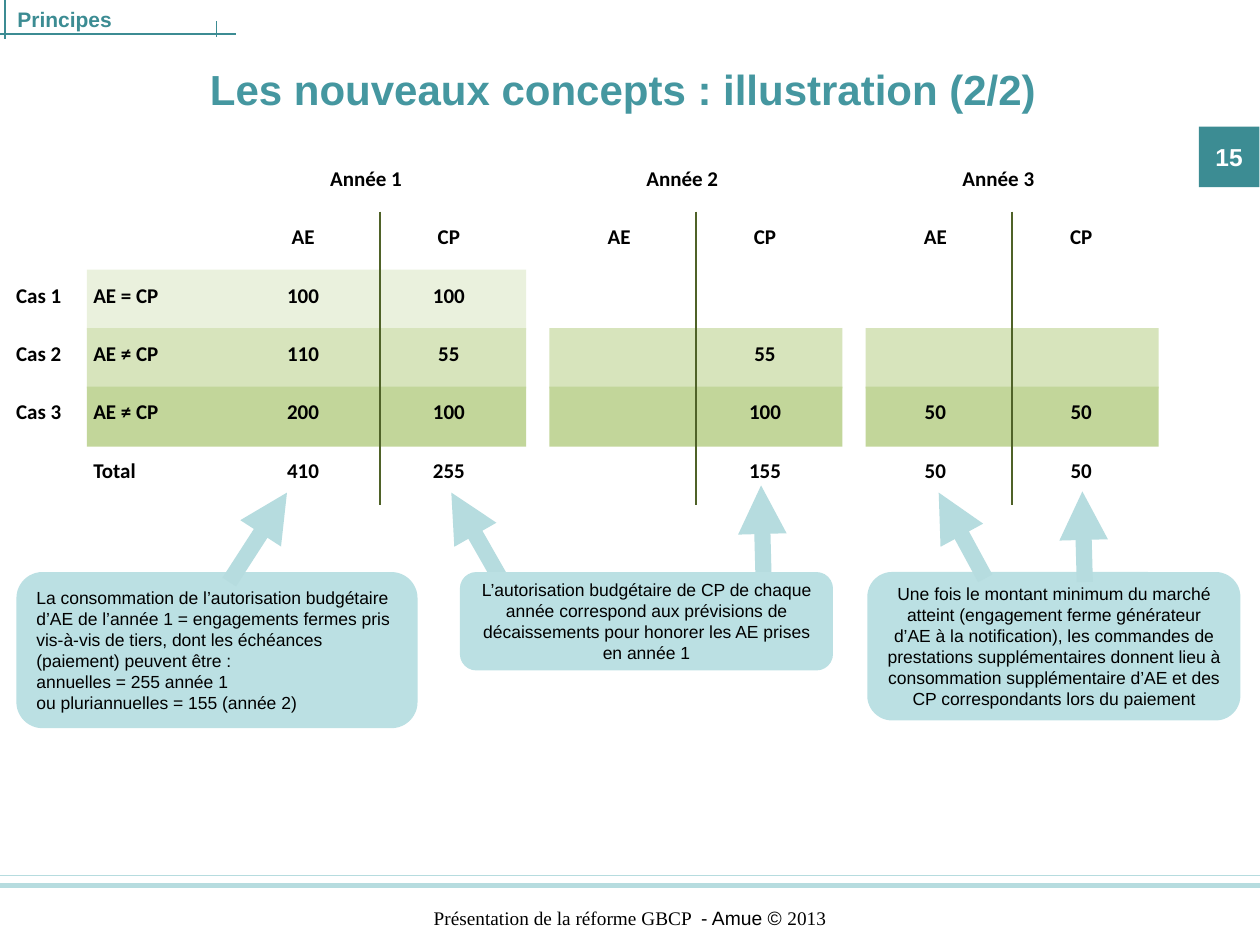
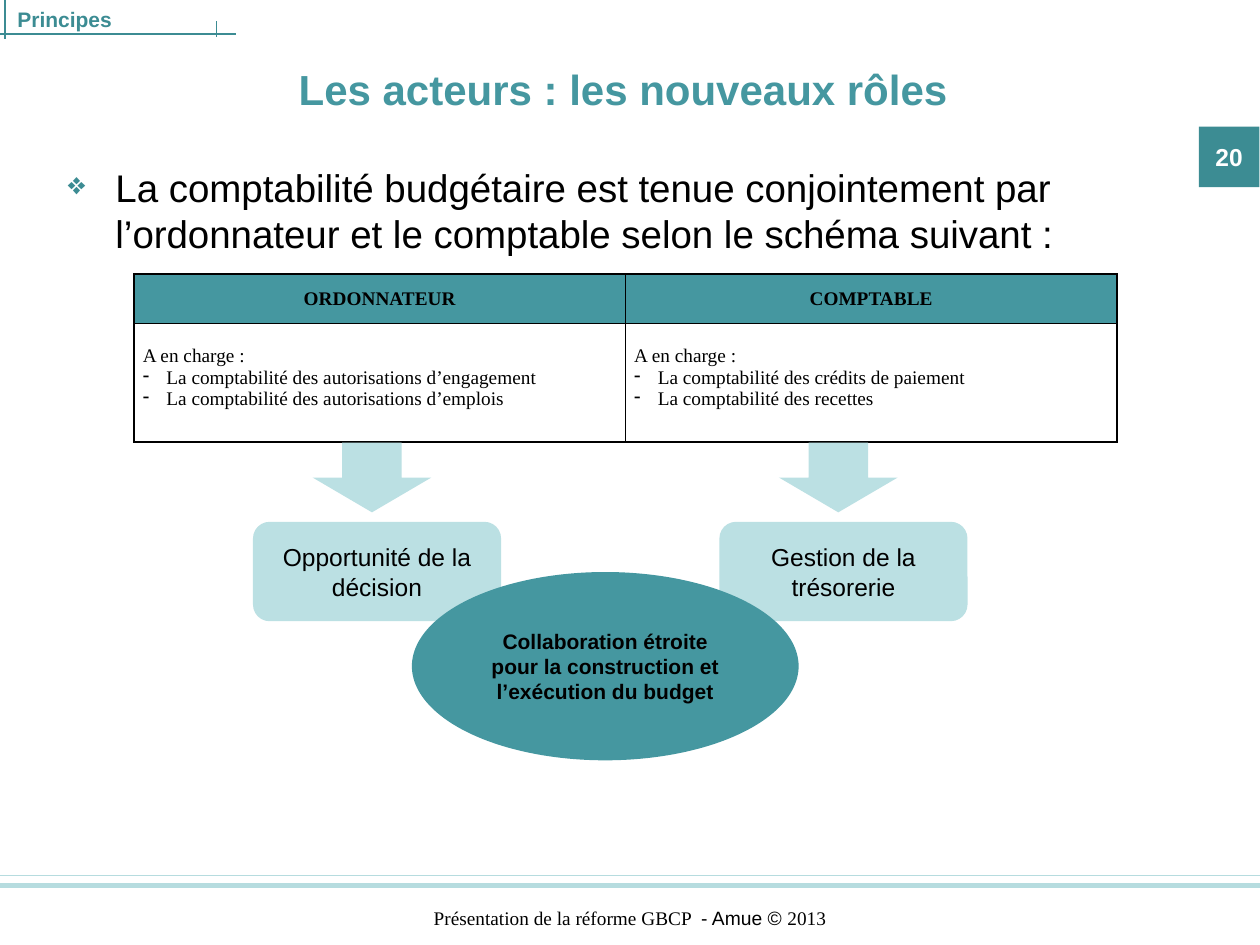
"""Build two slides on budget concepts and the roles of the actors."""
from dataclasses import dataclass

from lxml.etree import SubElement
from pptx import Presentation
from pptx.dml.color import RGBColor
from pptx.enum.shapes import MSO_CONNECTOR, MSO_SHAPE
from pptx.enum.text import MSO_ANCHOR, PP_ALIGN
from pptx.oxml import parse_xml
from pptx.oxml.ns import nsdecls, qn
from pptx.util import Pt


@dataclass(frozen=True)
class Style:
    size: float
    color: str = "000000"
    bold: bool = False
    font: str = "Arial"


@dataclass(frozen=True)
class Theme:
    dark: str = "3C8C93"
    accent: str = "4597A0"
    pale: str = "BBE0E3"
    rule: str = "B6DCDF"
    divider: str = "4F6228"
    black: str = "000000"
    bands: tuple = ("EAF1DD", "D7E4BC", "C2D69A")
    title: Style = Style(24, "4597A0", True)
    section: Style = Style(12, "3C8C93", True)
    badge: Style = Style(14, "FFFFFF", True)
    footer: Style = Style(11, font="Times New Roman")
    body: Style = Style(22)
    figure: Style = Style(12, bold=True, font="Calibri")
    callout: Style = Style(10)
    outcome: Style = Style(14)
    core: Style = Style(12, bold=True)
    head: Style = Style(11, bold=True, font="Times New Roman")
    cell: Style = Style(11, font="Times New Roman")


THEME = Theme()
LEFT, CENTER = PP_ALIGN.LEFT, PP_ALIGN.CENTER

SECTION = "Principes"
FOOTER = [("Présentation de la réforme GBCP  ", "Times New Roman"),
          ("- Amue © ", "Arial"), ("2013", "Times New Roman")]
FOOTER_RULES = [(500.4, 0.75), (506.2, 3)]
SECTION_LINES = [(2.9, 0, 2.9, 22.3), (0, 19.4, 134.6, 19.4), (123.8, 20.9, 123.8, 12.2)]

YEARS = ["Année 1", "Année 2", "Année 3"]
HEADINGS = ["AE", "CP"] * 3
CASES = [
    ("Cas 1", "AE = CP", ["100", "100", "", "", "", ""]),
    ("Cas 2", "AE ≠ CP", ["110", "55", "", "55", "", ""]),
    ("Cas 3", "AE ≠ CP", ["200", "100", "", "100", "50", "50"]),
    ("", "Total", ["410", "255", "", "155", "50", "50"]),
]
BAND_SPANS = [(49.7, 251), (313.9, 167.5), (494.6, 167.5)]
BAND_COUNTS = [1, 3, 3]

CALLOUTS = [
    {"box": (9.4, 326.9, 229.2, 89.2), "align": LEFT, "arrows_behind": False,
     "lines": ["La consommation de l’autorisation budgétaire d’AE de l’année 1 = engagements "
               "fermes pris vis-à-vis de tiers, dont les échéances (paiement) peuvent être :",
               "annuelles = 255 année 1",
               "ou pluriannuelles = 155 (année 2)"],
     "arrows": [(131, 332.6, 164, 281.5)]},
    {"box": (262.8, 326.9, 213.2, 56.2), "align": CENTER, "arrows_behind": True,
     "lines": ["L’autorisation budgétaire de CP de chaque année correspond aux prévisions de "
               "décaissements pour honorer les AE prises en année 1"],
     "arrows": [(436.3, 329, 434.9, 277.4), (288.7, 335.5, 257.9, 281.5)]},
    {"box": (495.6, 326.9, 213.2, 84.8), "align": CENTER, "arrows_behind": False,
     "lines": ["Une fois le montant minimum du marché atteint (engagement ferme générateur "
               "d’AE à la notification), les commandes de prestations supplémentaires donnent "
               "lieu à consommation supplémentaire d’AE et des CP correspondants lors du paiement"],
     "arrows": [(619.9, 332.6, 618.5, 280.8), (563, 330.5, 536.4, 281.5)]},
]

STATEMENT = ("La comptabilité budgétaire est tenue conjointement par l’ordonnateur "
             "et le comptable selon le schéma suivant :")
CHARGE = "A en charge :"
ROLES = [
    ("ORDONNATEUR", ["La comptabilité des autorisations d’engagement",
                     "La comptabilité des autorisations d’emplois"],
     "Opportunité de la décision"),
    ("COMPTABLE", ["La comptabilité des crédits de paiement",
                   "La comptabilité des recettes"],
     "Gestion de la trésorerie"),
]
COLLABORATION = "Collaboration étroite pour la construction et l’exécution du budget"


def rgb(color):
    return RGBColor.from_string(color)


def points(values):
    return [Pt(value) for value in values]


def add_bullet(paragraph, character, indent, color=None, percent=None):
    properties = paragraph._p.get_or_add_pPr()
    properties.set("marL", str(Pt(indent)))
    properties.set("indent", str(-Pt(indent)))
    if color:
        SubElement(SubElement(properties, qn("a:buClr")), qn("a:srgbClr")).set("val", color)
    if percent:
        SubElement(properties, qn("a:buSzPct")).set("val", str(percent * 1000))
    SubElement(properties, qn("a:buChar")).set("char", character)


def add_run(paragraph, text, style, font=None):
    run = paragraph.add_run()
    run.text = text
    run.font.name = font or style.font
    run.font.size = Pt(style.size)
    run.font.bold = style.bold
    run.font.color.rgb = rgb(style.color)


def write(frame, lines, style, align=LEFT, anchor=MSO_ANCHOR.TOP, inset=None):
    frame.word_wrap = True
    frame.vertical_anchor = anchor
    if inset is not None:
        frame.margin_left = frame.margin_right = Pt(inset)
        frame.margin_top = frame.margin_bottom = Pt(inset)
    for index, line in enumerate(lines):
        paragraph = frame.add_paragraph() if index else frame.paragraphs[0]
        paragraph.alignment = align
        for text, font in [(line, None)] if isinstance(line, str) else line:
            add_run(paragraph, text, style, font)


def add_text(slide, box, lines, style, **layout):
    frame = slide.shapes.add_textbox(*points(box)).text_frame
    write(frame, lines, style, **layout)
    return frame


def add_block(slide, kind, box, fill, lines=(), style=None, align=CENTER, inset=None):
    shape = slide.shapes.add_shape(kind, *points(box))
    shape.shadow.inherit = False
    shape.fill.solid()
    shape.fill.fore_color.rgb = rgb(fill)
    shape.line.fill.background()
    if lines:
        write(shape.text_frame, lines, style, align, MSO_ANCHOR.MIDDLE, inset)


def add_line(slide, ends, color, width, arrow=False):
    connector = slide.shapes.add_connector(MSO_CONNECTOR.STRAIGHT, *points(ends))
    connector.line.color.rgb = rgb(color)
    connector.line.width = Pt(width)
    if arrow:
        SubElement(connector.line._get_or_add_ln(), qn("a:tailEnd")).set("type", "triangle")
    SubElement(connector._element.spPr, qn("a:effectLst"))


def add_base_slide(presentation, title, number):
    slide = presentation.slides.add_slide(presentation.slide_layouts[6])
    add_text(slide, (123.8, 514.1, 472.3, 20.9), [FOOTER], THEME.footer, align=CENTER)
    for top, width in FOOTER_RULES:
        add_line(slide, (0, top, 720, top), THEME.rule, width)
    add_text(slide, (2.9, 0, 368.6, 21.6), [SECTION], THEME.section)
    for ends in SECTION_LINES:
        add_line(slide, ends, THEME.dark, 0.75)
    add_text(slide, (31.7, 25.2, 648.7, 51.1), [title], THEME.title,
             align=CENTER, anchor=MSO_ANCHOR.MIDDLE)
    add_block(slide, MSO_SHAPE.RECTANGLE, (685.1, 72.4, 34.5, 34.5), THEME.dark,
              [number], THEME.badge, inset=2.9)
    return slide


def add_callout(slide, callout):
    def draw_arrows():
        for ends in callout["arrows"]:
            add_line(slide, ends, THEME.rule, 9.25, arrow=True)

    if callout["arrows_behind"]:
        draw_arrows()
    add_block(slide, MSO_SHAPE.ROUNDED_RECTANGLE, callout["box"], THEME.pale,
              callout["lines"], THEME.callout, callout["align"])
    if not callout["arrows_behind"]:
        draw_arrows()


def add_figures(slide):
    year_step, row_step, year_top = 180.65, 33.4, 94.4

    def label(center, row, text):
        add_text(slide, (center - 35, year_top + row * row_step, 70, 14.4), [text],
                 THEME.figure, align=CENTER, inset=0)

    for row, (color, first_count) in enumerate(zip(THEME.bands, BAND_COUNTS)):
        for left, width in BAND_SPANS[:first_count]:
            add_block(slide, MSO_SHAPE.RECTANGLE,
                      (left, 154.1 + row * row_step, width, 34.4), color)
    for index, year in enumerate(YEARS):
        label(209.2 + index * year_step, 0, year)
        divider = 217.2 + index * year_step
        add_line(slide, (divider, 121, divider, 288.7), THEME.divider, 1.25)
    grid = [HEADINGS] + [values for _, _, values in CASES]
    for row, values in enumerate(grid, start=1):
        for column, value in enumerate(values):
            if value:
                year, side = divmod(column, 2)
                label(173.2 + year * year_step + side * 83.3, row, value)
    for row, (case, relation, _) in enumerate(CASES, start=2):
        for left, text in ((9.2, case), (53.3, relation)):
            if text:
                add_text(slide, (left, year_top + row * row_step, 70, 14.4), [text],
                         THEME.figure, inset=0)


def style_cell(cell, fill=None):
    cell.margin_left = cell.margin_right = Pt(5)
    cell.margin_top = cell.margin_bottom = 0
    properties = cell._tc.get_or_add_tcPr()
    for index, side in enumerate(("lnL", "lnR", "lnT", "lnB")):
        properties.insert(index, parse_xml(
            f'<a:{side} {nsdecls("a")} w="{Pt(1)}"><a:solidFill>'
            f'<a:srgbClr val="{THEME.black}"/></a:solidFill></a:{side}>'))
    if fill:
        cell.fill.solid()
        cell.fill.fore_color.rgb = rgb(fill)
    else:
        cell.fill.background()


def add_roles_table(slide):
    table = slide.shapes.add_table(2, len(ROLES), *points((76.6, 156.7, 561.6, 96))).table
    table.first_row = table.horz_banding = False
    for row, height in zip(table.rows, (28.2, 67.8)):
        row.height = Pt(height)
    for column, (role, duties, _) in enumerate(ROLES):
        table.columns[column].width = Pt(280.8)
        head, detail = table.cell(0, column), table.cell(1, column)
        style_cell(head, THEME.accent)
        head.vertical_anchor = MSO_ANCHOR.MIDDLE
        write(head.text_frame, [role], THEME.head, CENTER, MSO_ANCHOR.MIDDLE)
        style_cell(detail)
        detail.margin_top = Pt(12.5)
        write(detail.text_frame, [CHARGE] + duties, THEME.cell)
        for paragraph in detail.text_frame.paragraphs[1:]:
            add_bullet(paragraph, "-", 13.5)


def build_concepts(presentation):
    slide = add_base_slide(presentation, "Les nouveaux concepts : illustration (2/2)", "15")
    for callout in CALLOUTS:
        add_callout(slide, callout)
    add_figures(slide)


def build_actors(presentation):
    slide = add_base_slide(presentation, "Les acteurs : les nouveaux rôles", "20")
    statement = add_text(slide, (31.7, 90, 648, 62), [STATEMENT], THEME.body)
    add_bullet(statement.paragraphs[0], "❖", 27.2, THEME.dark, 80)
    add_roles_table(slide)
    for index, (_, _, outcome) in enumerate(ROLES):
        shift = index * 266.5
        add_block(slide, MSO_SHAPE.DOWN_ARROW, (178.6 + shift, 253, 67.9, 39.8), THEME.pale)
        add_block(slide, MSO_SHAPE.ROUNDED_RECTANGLE, (144.6 + shift, 298.2, 141.8, 56.8),
                  THEME.pale, [outcome], THEME.outcome)
    add_block(slide, MSO_SHAPE.OVAL, (235.4, 326.9, 221, 107.6), THEME.accent,
              [COLLABORATION], THEME.core)


def main():
    presentation = Presentation()
    presentation.slide_width, presentation.slide_height = Pt(720), Pt(540)
    build_concepts(presentation)
    build_actors(presentation)
    presentation.save("out.pptx")


if __name__ == "__main__":
    main()
